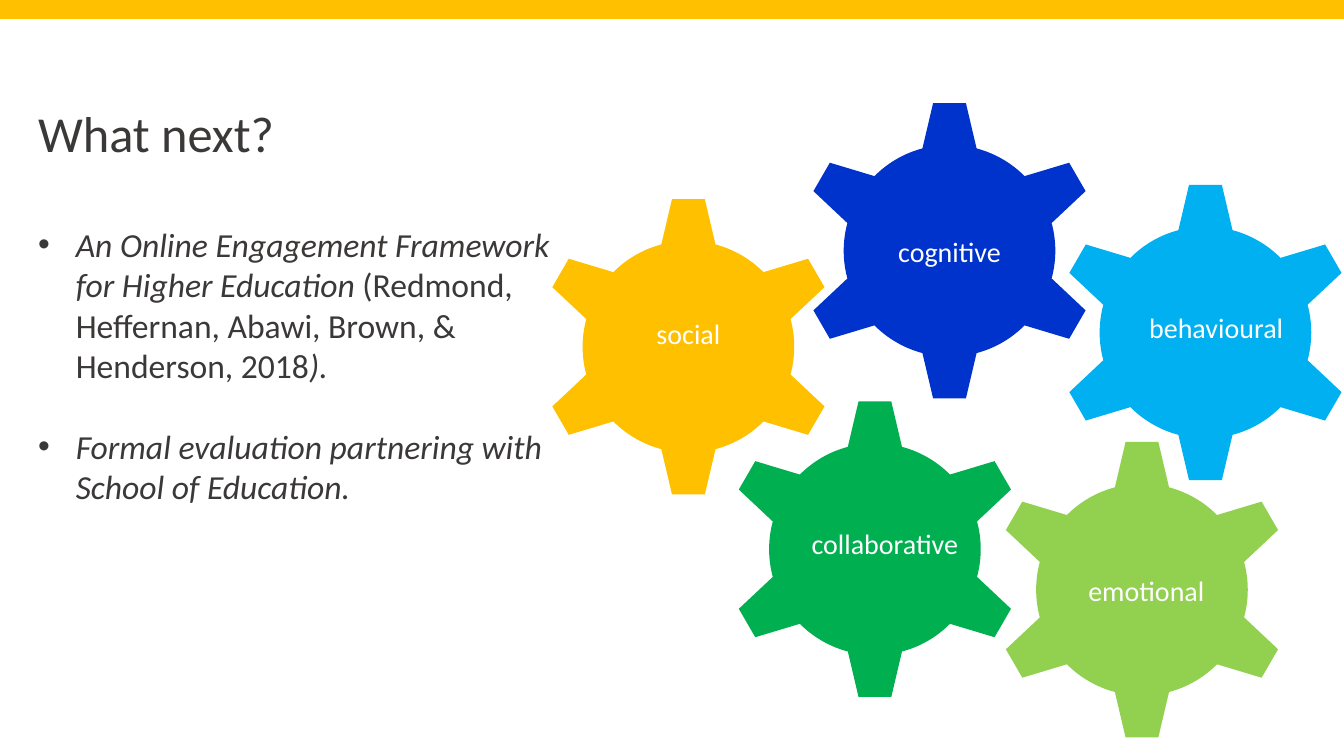
from pptx import Presentation
from pptx import util as u
from pptx.dml.color import RGBColor
from pptx.enum import shapes, text
from pptx.oxml.ns import qn
from lxml import etree

FONT = "Calibri"
INK, WHITE, AMBER = "3B3838", "FFFFFF", "FFC000"
GEAR_SIZE = 7.62

# label, colour, gear (left, top), label box (left, top, width, height) in cm
GEARS = [
    ("social", AMBER, (13.54, 4.93), (15.75, 6.86, 3.2, 3.18)),
    ("emotional", "92D050", (24.97, 11.05), (26.77, 13.36, 4.24, 3.12)),
    ("collaborative", "00B050", (18.24, 10.03), (20.32, 12.19, 3.96, 3.12)),
    ("behavioural", "00B0F0", (26.57, 4.57), (28.68, 7.24, 3.94, 2.13)),
    ("cognitive", "0033CC", (20.12, 2.51), (22.1, 4.5, 3.66, 3.76)),
]
TITLE = "What next?"
# each bullet is a list of (text, italic)
BULLETS = [
    [
        ("An Online Engagement Framework for Higher Education ", True),
        ("(Redmond, Heffernan, Abawi, Brown, & Henderson, 2018", False),
        (").", True),
    ],
    [("Formal evaluation partnering with School of Education.", True)],
]


def colour(value):
    return RGBColor.from_string(value)


def set_font(paragraph, size, value):
    paragraph.font.name = FONT
    paragraph.font.size = u.Pt(size)
    paragraph.font.color.rgb = colour(value)


def add_filled(slide, kind, box, value):
    shape = slide.shapes.add_shape(kind, *map(u.Cm, box))
    shape.shadow.inherit = False
    shape.fill.solid()
    shape.fill.fore_color.rgb = colour(value)
    shape.line.fill.background()


def add_text_frame(slide, box):
    frame = slide.shapes.add_textbox(*map(u.Cm, box)).text_frame
    frame.word_wrap = True
    return frame


def add_label(slide, label, box):
    frame = add_text_frame(slide, box)
    frame.vertical_anchor = text.MSO_ANCHOR.MIDDLE
    frame.margin_left = frame.margin_right = u.Cm(0.1)
    frame.margin_top = frame.margin_bottom = u.Cm(0.1)
    paragraph = frame.paragraphs[0]
    paragraph.text = label
    paragraph.alignment = text.PP_ALIGN.CENTER
    paragraph.line_spacing = 0.9
    set_font(paragraph, 20, WHITE)


def add_bullet(paragraph):
    properties = paragraph._p.get_or_add_pPr()
    properties.set("marL", str(u.Cm(0.95)))
    properties.set("indent", str(-u.Cm(0.95)))
    etree.SubElement(properties, qn("a:buFont"), typeface="Arial")
    etree.SubElement(properties, qn("a:buChar"), char="•")


def add_body(slide):
    frame = add_text_frame(slide, (0.71, 2.44, 14.25, 12.57))
    title = frame.paragraphs[0]
    title.text = TITLE
    title.space_after = u.Pt(44)
    set_font(title, 36, INK)
    for index, parts in enumerate(BULLETS):
        paragraph = frame.add_paragraph()
        add_bullet(paragraph)
        if index:
            paragraph.space_before = u.Pt(29)
        set_font(paragraph, 24, INK)
        for words, italic in parts:
            run = paragraph.add_run()
            run.text = words
            run.font.italic = italic


def main():
    presentation = Presentation()
    presentation.slide_width = u.Cm(33.87)
    presentation.slide_height = u.Cm(19.05)
    slide = presentation.slides.add_slide(presentation.slide_layouts[6])

    add_filled(slide, shapes.MSO_SHAPE.RECTANGLE, (0, 0, 33.87, 0.48), AMBER)
    for label, value, corner, label_box in GEARS:
        gear_box = (*corner, GEAR_SIZE, GEAR_SIZE)
        add_filled(slide, shapes.MSO_SHAPE.GEAR_6, gear_box, value)
        add_label(slide, label, label_box)
    add_body(slide)
    presentation.save("out.pptx")


if __name__ == "__main__":
    main()
